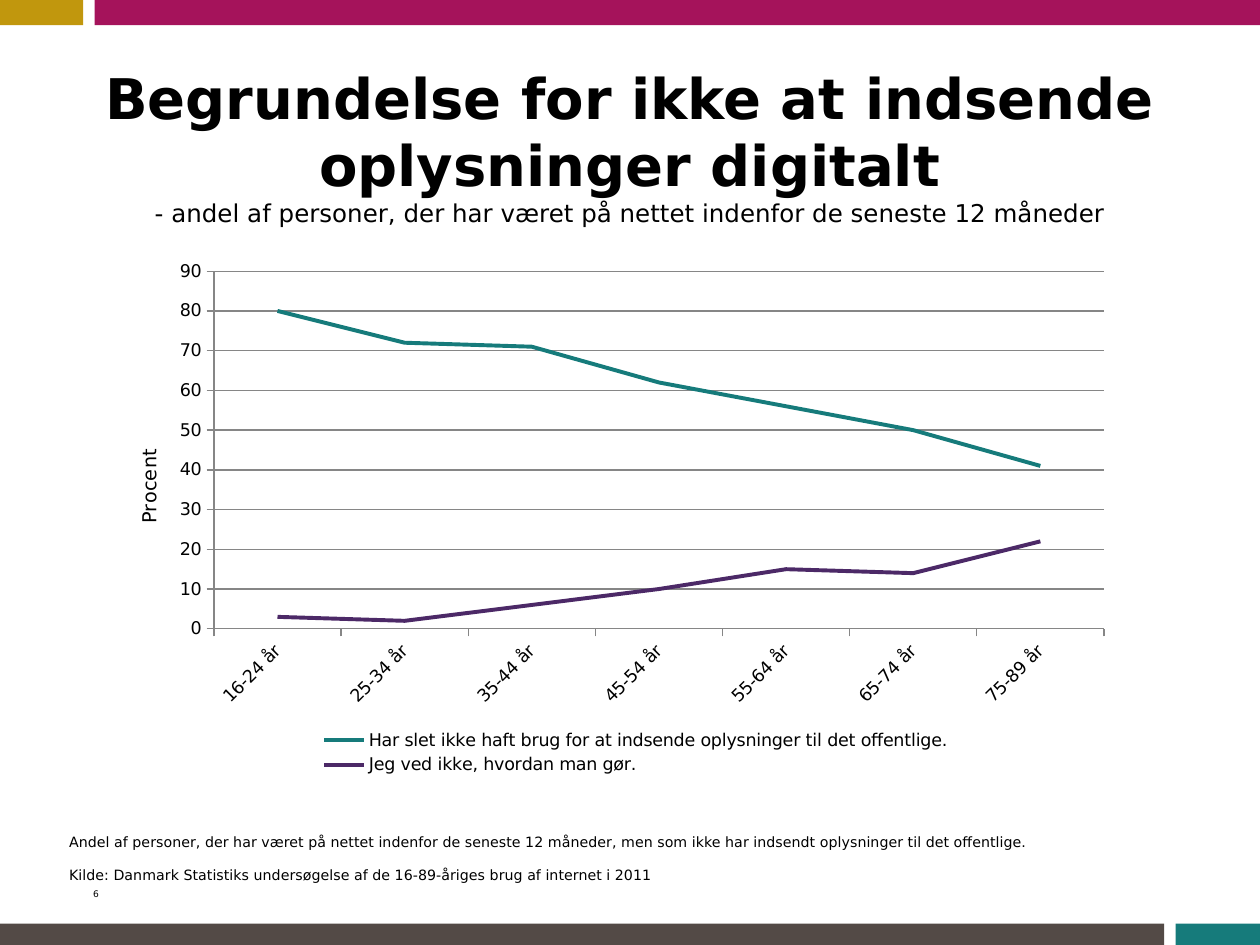
from dataclasses import dataclass

from pptx import Presentation
from pptx.chart.axis import _BaseAxis
from pptx.chart.chart import Chart
from pptx.chart.data import CategoryChartData
from pptx.dml.color import RGBColor
from pptx.enum.chart import XL_CHART_TYPE, XL_LEGEND_POSITION, XL_MARKER_STYLE, XL_TICK_MARK
from pptx.enum.shapes import MSO_SHAPE
from pptx.enum.text import MSO_ANCHOR, MSO_AUTO_SIZE, PP_ALIGN
from pptx.oxml import parse_xml
from pptx.oxml.ns import nsdecls, qn
from pptx.slide import Slide
from pptx.text.text import Font, TextFrame, _Run
from pptx.util import Inches, Pt

FONT = "DejaVu Sans"
BLACK = "000000"
GRID_GREY = "868686"
TEAL = "167B7B"
PURPLE = "4C2967"


@dataclass(frozen=True)
class Bar:
    left: float
    top: float
    width: float
    color: str


@dataclass(frozen=True)
class Answer:
    name: str
    percentages: tuple[int, ...]
    color: str


BARS = (
    Bar(0.75, 0, 9.25, "A5135B"),
    Bar(0, 0, 0.66, "C1970D"),
    Bar(0, 7.33, 9.24, "534A46"),
    Bar(9.33, 7.33, 0.67, TEAL),
)
AGE_GROUPS = ("16-24 år", "25-34 år", "35-44 år", "45-54 år", "55-64 år", "65-74 år", "75-89 år")
ANSWERS = (
    Answer("Har slet ikke haft brug for at indsende oplysninger til det offentlige.",
           (80, 72, 71, 62, 56, 50, 41), TEAL),
    Answer("Jeg ved ikke, hvordan man gør.", (3, 2, 6, 10, 15, 14, 22), PURPLE),
)
HEADING = "Begrundelse for ikke at indsende oplysninger digitalt"
SUBHEADING = "- andel af personer, der har været på nettet indenfor de seneste 12 måneder"
NOTES = (
    "Andel af personer, der har været på nettet indenfor de seneste 12 måneder, "
    "men som ikke har indsendt oplysninger til det offentlige.",
    "Kilde: Danmark Statistiks undersøgelse af de 16-89-åriges brug af internet i 2011",
)


def rgb(color: str) -> RGBColor:
    return RGBColor.from_string(color)


def style_font(font: Font, size: float, bold: bool = False) -> None:
    font.name = FONT
    font.size = Pt(size)
    font.bold = bold
    font.color.rgb = rgb(BLACK)


def lower_run(run: _Run) -> None:
    run._r.get_or_add_rPr().set("baseline", "-25000")


def draw_bar(slide: Slide, bar: Bar) -> None:
    strip = slide.shapes.add_shape(
        MSO_SHAPE.RECTANGLE, Inches(bar.left), Inches(bar.top), Inches(bar.width), Inches(0.2))
    strip.shadow.inherit = False
    strip.fill.solid()
    strip.fill.fore_color.rgb = rgb(bar.color)
    strip.line.fill.background()


def add_text(slide: Slide, left: float, top: float, width: float, height: float,
             text: str, anchor: MSO_ANCHOR) -> TextFrame:
    frame = slide.shapes.add_textbox(
        Inches(left), Inches(top), Inches(width), Inches(height)).text_frame
    frame.word_wrap = True
    frame.vertical_anchor = anchor
    frame.text = text
    return frame


def draw_heading(slide: Slide) -> None:
    frame = add_text(slide, 0.67, 0.45, 8.66, 1.41, f"{HEADING}\v{SUBHEADING}", MSO_ANCHOR.MIDDLE)
    paragraph = frame.paragraphs[0]
    paragraph.alignment = PP_ALIGN.CENTER
    heading, subheading = paragraph.runs
    style_font(heading.font, 32, bold=True)
    style_font(subheading.font, 14)


def draw_small_print(frame: TextFrame, size: float) -> None:
    for paragraph in frame.paragraphs:
        for run in paragraph.runs:
            style_font(run.font, size)
            lower_run(run)


def place_manually(element, index: int, target: str, **fractions: float) -> None:
    for layout in element.findall(qn("c:layout")):
        element.remove(layout)
    modes = "".join(f'<c:{axis}Mode val="edge"/>' for axis in "xy")
    sizes = "".join(f'<c:{key} val="{value}"/>' for key, value in fractions.items())
    element.insert(index, parse_xml(
        f'<c:layout {nsdecls("c")}><c:manualLayout>{target}{modes}{sizes}'
        '</c:manualLayout></c:layout>'))


def style_axis(axis: _BaseAxis) -> None:
    axis.major_tick_mark = XL_TICK_MARK.OUTSIDE
    axis.minor_tick_mark = XL_TICK_MARK.NONE
    axis.format.line.color.rgb = rgb(GRID_GREY)
    axis.format.line.width = Pt(0.75)
    style_font(axis.tick_labels.font, 10)


def style_axes(chart: Chart) -> None:
    ages, percent = chart.category_axis, chart.value_axis
    style_axis(ages)
    style_axis(percent)
    ages.has_major_gridlines = False
    ages._element.find(qn("c:txPr")).find(qn("a:bodyPr")).set("rot", "-2700000")
    percent.minimum_scale, percent.maximum_scale, percent.major_unit = 0, 90, 10
    percent.tick_labels.number_format = "#,##0"
    percent.tick_labels.number_format_is_linked = False
    percent.has_major_gridlines = True
    percent.major_gridlines.format.line.color.rgb = rgb(GRID_GREY)
    percent.major_gridlines.format.line.width = Pt(0.75)
    percent.has_title = True
    caption = percent.axis_title.text_frame
    caption.text = "Procent"
    style_font(caption.paragraphs[0].runs[0].font, 11)
    caption._txBody.find(qn("a:bodyPr")).set("rot", "-5400000")
    place_manually(percent.axis_title._element, 1, "", x=0.026, y=0.375)


def draw_chart(slide: Slide) -> None:
    data = CategoryChartData(number_format="#,##0")
    data.categories = AGE_GROUPS
    for answer in ANSWERS:
        data.add_series(answer.name, answer.percentages)
    chart = slide.shapes.add_chart(
        XL_CHART_TYPE.LINE, Inches(0.83), Inches(1.94), Inches(8.43), Inches(4.25), data).chart
    style_font(chart.font, 10)
    chart.has_title = False
    chart.has_legend = True
    chart.legend.position = XL_LEGEND_POSITION.BOTTOM
    chart.legend.include_in_layout = False
    style_font(chart.legend.font, 10)
    style_axes(chart)
    plot = chart.plots[0]
    plot.vary_by_categories = False
    for series, answer in zip(plot.series, ANSWERS):
        series.smooth = False
        series.marker.style = XL_MARKER_STYLE.NONE
        series.format.line.color.rgb = rgb(answer.color)
        series.format.line.width = Pt(2.25)
    plot_area = chart._chartSpace.chart.plotArea
    place_manually(plot_area, 0, '<c:layoutTarget val="inner"/>', x=0.103, y=0.05, w=0.838, h=0.668)


def main() -> None:
    presentation = Presentation()
    presentation.slide_width = Inches(10)
    presentation.slide_height = Inches(7.5)
    slide = presentation.slides.add_slide(presentation.slide_layouts[6])
    for bar in BARS:
        draw_bar(slide, bar)
    draw_heading(slide)
    page_number = add_text(slide, 0.64, 6.85, 0.67, 0.4, "6", MSO_ANCHOR.MIDDLE)
    draw_small_print(page_number, 9)
    draw_chart(slide)
    notes = add_text(slide, 0.45, 6.43, 9.15, 0.42, "\n".join(NOTES), MSO_ANCHOR.TOP)
    notes.word_wrap = False
    notes.auto_size = MSO_AUTO_SIZE.SHAPE_TO_FIT_TEXT
    draw_small_print(notes, 14)
    presentation.save("out.pptx")


if __name__ == "__main__":
    main()
